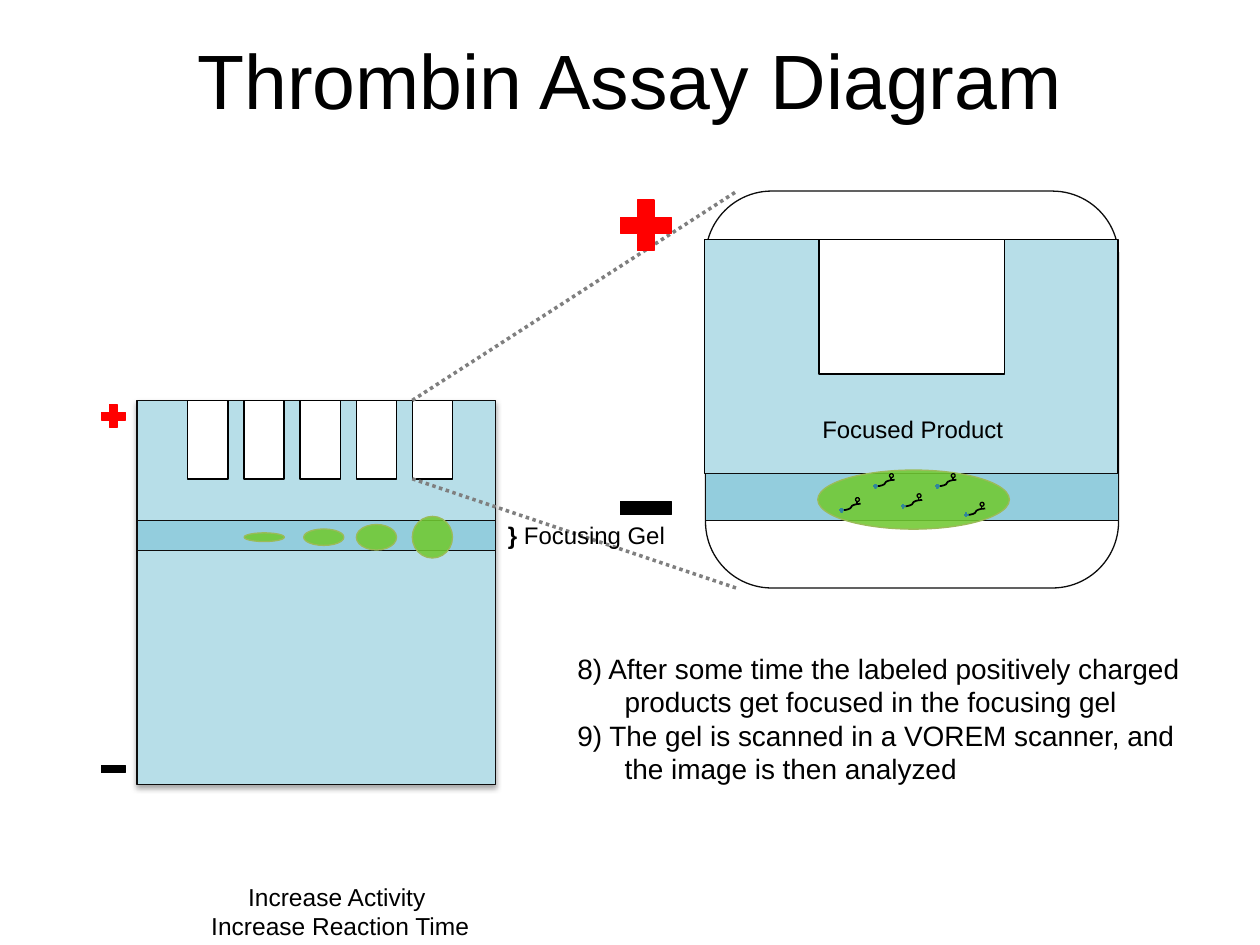
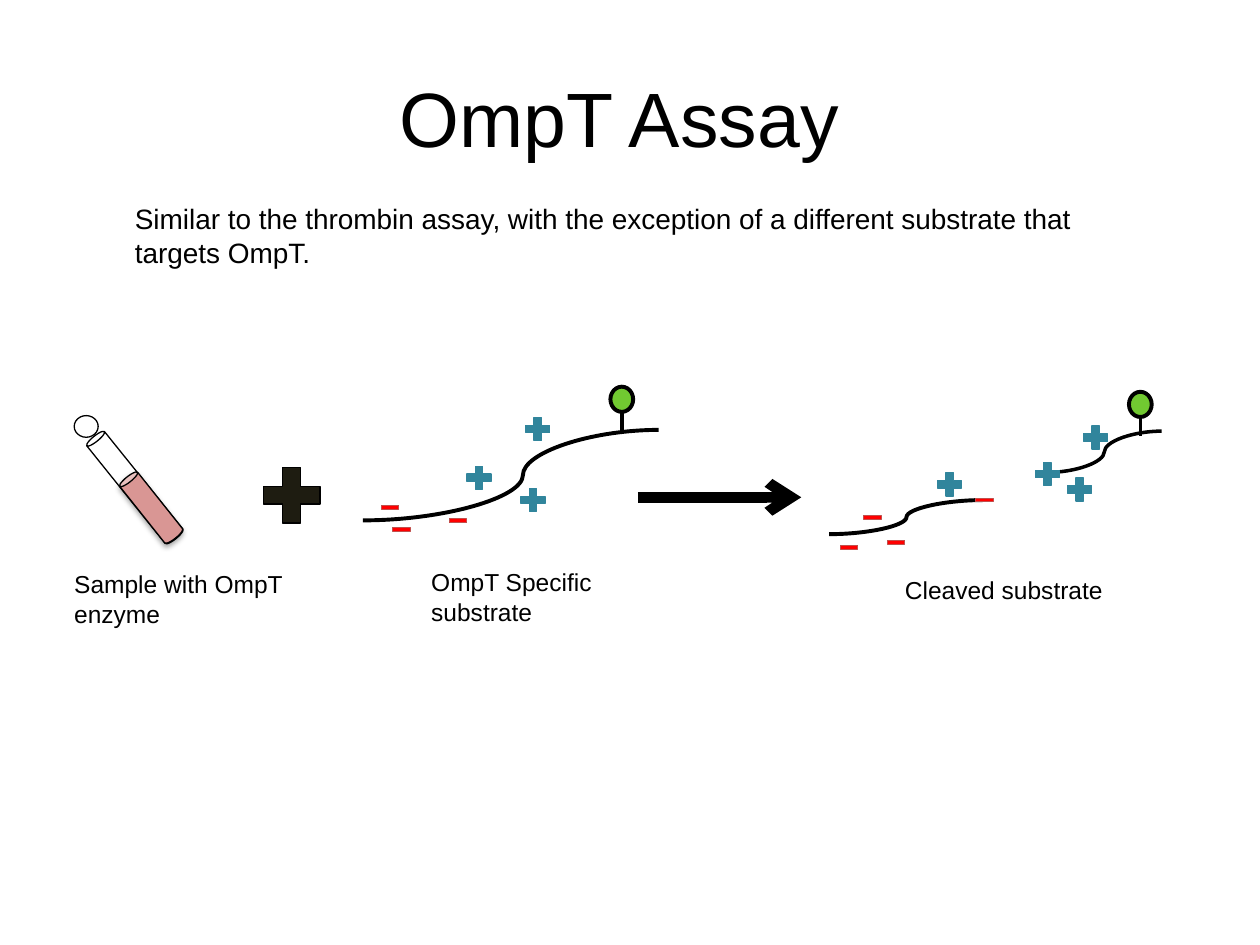
from lxml import etree
from pptx import Presentation
from pptx.dml import color
from pptx.enum import dml, shapes, text
from pptx.oxml import ns
from pptx.util import Pt

COLORS = {
    "black": "000000", "white": "FFFFFF", "outline": "0D0D0D",
    "gel": "B7DEE8", "focusing": "93CDDD", "product": "71C931", "rim": "9BBB59",
    "red": "FF0000", "minus_rim": "C0504D", "teal": "31859C",
    "gray": "7F7F7F", "sample": "D99694", "dark": "1E1C11",
}
KIND = shapes.MSO_SHAPE
CENTER = text.PP_ALIGN.CENTER


def rgb(name):
    return color.RGBColor.from_string(COLORS[name])


def child(parent, tag, **attributes):
    return etree.SubElement(parent, ns.qn(tag), attributes)


class Painter:
    font = "Arial"

    def __init__(self):
        self.deck = Presentation()
        self.deck.slide_width, self.deck.slide_height = Pt(720), Pt(540)
        self.page = None

    def start(self, title, top):
        self.page = self.deck.slides.add_slide(self.deck.slide_layouts[6])
        self.label((36, top, 648, 90), [title], 44, CENTER, True)

    def label(self, place, lines, size=14, align=None, middle=False, hang=0):
        box = self.page.shapes.add_textbox(*map(Pt, place))
        frame = box.text_frame
        frame.word_wrap = True
        if middle:
            frame.vertical_anchor = text.MSO_ANCHOR.MIDDLE
        frame.text = "\n".join(lines)
        for para in frame.paragraphs:
            para.alignment = align
            if hang:
                props = para._p.get_or_add_pPr()
                props.set("marL", str(Pt(hang)))
                props.set("indent", str(-Pt(hang)))
            for span in para.runs:
                self.style(span, size)
        return box

    def style(self, span, size, bold=False):
        span.font.name = self.font
        span.font.size = Pt(size)
        span.font.bold = bold
        span.font.color.rgb = rgb("black")

    def shape(self, kind, place, fill, line="black", width=0.75, turn=0, alpha=None, shadow=False):
        item = self.page.shapes.add_shape(kind, *map(Pt, place))
        item.rotation = turn
        item.shadow.inherit = False
        if fill:
            item.fill.solid()
            item.fill.fore_color.rgb = rgb(fill)
        else:
            item.fill.background()
        item.line.color.rgb = rgb(line)
        item.line.width = Pt(width)
        props = item.element.spPr
        if alpha:
            tint = props.find(ns.qn("a:solidFill")).find(ns.qn("a:srgbClr"))
            child(tint, "a:alpha", val=str(alpha * 1000))
        if shadow:
            effects = props.find(ns.qn("a:effectLst"))
            outer = child(effects, "a:outerShdw", blurRad=str(Pt(3.1)), dist=str(Pt(1.8)),
                          dir="5400000", rotWithShape="0")
            shade = child(outer, "a:srgbClr", val=COLORS["black"])
            child(shade, "a:alpha", val="35000")
        return item

    def line(self, start, end, width, ink="black", curved=False, bend=None, dotted=False, arrow=False):
        kind = shapes.MSO_CONNECTOR.CURVE if curved else shapes.MSO_CONNECTOR.STRAIGHT
        item = self.page.shapes.add_connector(kind, *map(Pt, (*start, *end)))
        item.line.color.rgb = rgb(ink)
        item.line.width = Pt(width)
        if dotted:
            item.line.dash_style = dml.MSO_LINE.ROUND_DOT
        props = item.element.spPr
        if arrow:
            child(props.find(ns.qn("a:ln")), "a:tailEnd", type="arrow")
        if bend:
            guides = props.find(ns.qn("a:prstGeom")).find(ns.qn("a:avLst"))
            child(guides, "a:gd", name="adj1", fmla=f"val {bend}")
        child(props, "a:effectLst")

    def plus(self, left, top, width=18.7, height=18, fill="teal", line="teal"):
        self.shape(KIND.MATH_PLUS, (left, top, width, height), fill, line)

    def minus(self, left, top, width=13.7, height=9.4, fill="red", line="minus_rim"):
        self.shape(KIND.MATH_MINUS, (left, top, width, height), fill, line, 0.5)

    def spot(self, place):
        self.shape(KIND.OVAL, place, "product", "rim", alpha=88)

    def tiny_strand(self, x, y):
        self.line((x, y), (x + 10.8, y - 3.7), 1, curved=True)
        self.shape(KIND.OVAL, (x + 7.9, y - 7.2, 2.2, 2.2), "product")
        self.line((x + 8.7, y - 5), (x + 8.7, y - 3.6), 1)
        self.plus(x - 1.5, y - 1.5, 2.9, 2.9)

    def marker(self, left, top):
        self.shape(KIND.OVAL, (left, top, 13, 14.4), "product", width=2.25)
        self.line((left + 6.5, top + 14.4), (left + 6.5, top + 25.2), 2)


def thrombin_page(paint):
    paint.start("Thrombin Assay Diagram", 0)
    paint.shape(KIND.RECTANGLE, (78.3, 228.8, 205, 219.5), "gel", "outline", shadow=True)
    for well in range(5):
        paint.shape(KIND.RECTANGLE, (107.3 + 32.08 * well, 228.8, 23, 45), "white")
    paint.shape(KIND.RECTANGLE, (78.3, 297.4, 205, 17.3), "focusing", "outline")
    paint.plus(55.4, 228.8, fill="red", line="red")
    paint.minus(55.4, 430.4, 18.7, 18, "black", "black")

    paint.shape(KIND.ROUNDED_RECTANGLE, (403.2, 109.2, 236, 226.8), "white", "outline")
    paint.shape(KIND.RECTANGLE, (402.7, 136.8, 236.2, 134), "gel")
    paint.shape(KIND.RECTANGLE, (468, 136.8, 106, 77), "white")
    paint.shape(KIND.RECTANGLE, (403.2, 270.8, 236, 26.6), "focusing", "outline")
    for near, far in ((228.8, 109.2), (273.6, 336.2)):
        paint.line((235.6, near), (421.2, far), 2, "gray", dotted=True)
    paint.plus(349.2, 109, 39.6, 39.6, "red", "red")
    paint.minus(349.2, 273.7, 39.6, 33.1, "black", "black")

    paint.spot((467.3, 268.6, 109.5, 33.8))
    for x, y in ((481, 291.6), (516.2, 289.4), (535.7, 277.9), (552.2, 294.3), (500.4, 277.9)):
        paint.tiny_strand(x, y)
    for left, height in ((235.6, 23.8), (203.6, 14.6), (173.5, 9.4), (139.5, 5)):
        paint.spot((left, 307 - height / 2, 23, height))

    paint.label((106.6, 490.8, 175.7, 59.8), ["Increase Activity ", "Increase Reaction Time"],
                14, CENTER, True)
    box = paint.label((283.2, 289, 237.6, 33.1), ["} "], 13.7, middle=True)
    para = box.text_frame.paragraphs[0]
    para.runs[0].font.bold = True
    span = para.add_run()
    span.text = "Focusing Gel"
    paint.style(span, 13.7)
    paint.label((402.8, 228.8, 237.6, 33.1), ["Focused Product"], 13.7, CENTER, True)
    paint.label((322.8, 368.6, 375.1, 85), [
        "8) After some time the labeled positively charged products get focused in the focusing gel",
        "9) The gel is scanned in a VOREM scanner, and the image is then analyzed",
    ], 16, hang=27)


def ompt_page(paint):
    paint.start("OmpT Assay ", 21.6)
    paint.label((70, 111.6, 599, 46), [
        "Similar to the thrombin assay, with the exception of a different substrate that targets OmpT.",
    ], 16)

    paint.shape(KIND.CAN, (70.6, 241.2, 13, 74.9), None, turn=321.2)
    paint.shape(KIND.OVAL, (42.4, 237.5, 13.7, 12.4), "white")
    paint.shape(KIND.CAN, (79.9, 267.8, 13, 44.6), "sample", turn=321.5, shadow=True)
    paint.plus(144.7, 261.4, 43.9, 43.2, "dark", "black")

    paint.line((207.4, 297.4), (376.4, 245.7), 2.25, curved=True, bend=54100)
    paint.line((473.8, 305.3), (562.3, 285.8), 2.25, curved=True)
    paint.line((598.3, 270), (663.8, 246.4), 2, curved=True)
    paint.marker(348.8, 221)
    paint.marker(645.1, 223.9)
    paint.line((364.5, 284.2), (457.9, 284.2), 6, arrow=True)

    for spot in ((264.4, 264), (295.2, 276.7), (298, 236.2), (533.3, 267.8),
                 (589.2, 261.9), (607.7, 270.7), (616.8, 241)):
        paint.plus(*spot)
    for spot in ((216, 285.1), (254.9, 292.8), (222.5, 297.8), (491.8, 291.2),
                 (505.2, 305.3), (555.6, 281), (478.4, 308)):
        paint.minus(*spot)

    paint.label((35.3, 321.8, 149.8, 41), ["Sample with OmpT enzyme"])
    paint.label((239.3, 320.6, 118, 41), ["OmpT Specific substrate"])
    paint.label((510, 324.9, 134.6, 24.5), ["Cleaved substrate"])


def main():
    paint = Painter()
    thrombin_page(paint)
    ompt_page(paint)
    paint.deck.save("out.pptx")


if __name__ == "__main__":
    main()
